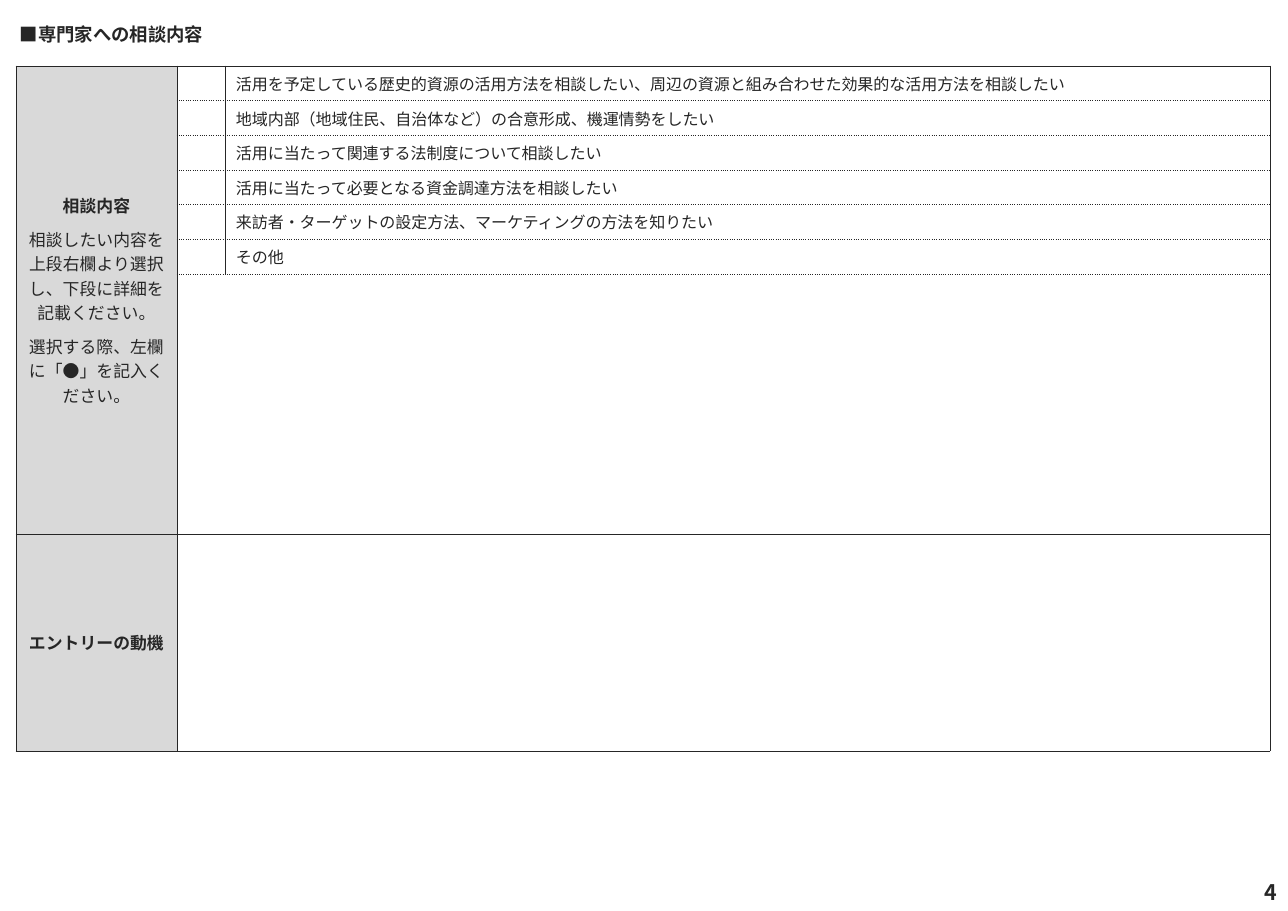
import pptx
import pptx.dml.color
import pptx.enum.text
import pptx.oxml
import pptx.oxml.ns
import pptx.util

PX = 8300
FONT = "Noto Sans CJK JP"
COLORS = {"ink": "262626", "label": "D9D9D9", "paper": "FFFFFF"}
LEFT, CENTER, RIGHT = (pptx.enum.text.PP_ALIGN.LEFT, pptx.enum.text.PP_ALIGN.CENTER,
                       pptx.enum.text.PP_ALIGN.RIGHT)
MIDDLE = pptx.enum.text.MSO_ANCHOR.MIDDLE

OPTIONS = [
    "活用を予定している歴史的資源の活用方法を相談したい、周辺の資源と組み合わせた効果的な活用方法を相談したい",
    "地域内部（地域住民、自治体など）の合意形成、機運情勢をしたい",
    "活用に当たって関連する法制度について相談したい",
    "活用に当たって必要となる資金調達方法を相談したい",
    "来訪者・ターゲットの設定方法、マーケティングの方法を知りたい",
    "その他",
]
CONSULTATION = [
    "相談内容",
    "相談したい内容を上段右欄より選択し、下段に詳細を記載ください。",
    "選択する際、左欄に「●」を記入ください。",
]
DETAIL_ROW = len(OPTIONS)
MOTIVE_ROW = DETAIL_ROW + 1
COLUMN_WIDTHS = [161, 48, 1045]
OPTIONS_HEIGHT, DETAIL_HEIGHT, MOTIVE_HEIGHT = 208, 260, 217


def px(n):
    return pptx.util.Emu(n * PX)


def rgb(name):
    return pptx.dml.color.RGBColor.from_string(COLORS[name])


def write(tf, lines, size, align=LEFT, bold=True):
    """Fill a text frame; only the first line can be bold, later ones are spaced."""
    tf.word_wrap = True
    tf.text = "\n".join(lines)
    for i, p in enumerate(tf.paragraphs):
        p.alignment = align
        if i:
            p.space_before = pptx.util.Pt(6)
        for r in p.runs:
            r.font.size = pptx.util.Pt(size)
            r.font.bold = bold and i == 0
            r.font.name = FONT
            r.font.color.rgb = rgb("ink")
            ea = pptx.oxml.parse_xml(
                f'<a:ea {pptx.oxml.ns.nsdecls("a")} typeface="{FONT}"/>')
            r.font.fill  # keeps the fill ahead of the typefaces
            r._r.get_or_add_rPr().find(pptx.oxml.ns.qn("a:latin")).addnext(ea)


def add_text(slide, box, text, size, align=LEFT, anchor=None):
    sp = slide.shapes.add_textbox(*map(px, box))
    write(sp.text_frame, [text], size, align)
    sp.text_frame.vertical_anchor = anchor


def set_blank_size(cell, size):
    """Keep an empty cell from stretching its row."""
    end = pptx.oxml.parse_xml(
        f'<a:endParaRPr {pptx.oxml.ns.nsdecls("a")} sz="{int(size * 100)}"/>')
    cell.text_frame.paragraphs[0]._p.append(end)


def set_borders(cell, dotted):
    """Draw all four sides, dotted on the sides named in dotted (T, B)."""
    tcPr = cell._tc.get_or_add_tcPr()
    for i, side in enumerate("LRTB"):
        dash = "sysDot" if side in dotted else "solid"
        tcPr.insert(i, pptx.oxml.parse_xml(
            f'<a:ln{side} {pptx.oxml.ns.nsdecls("a")} w="6350"><a:solidFill>'
            f'<a:srgbClr val="{COLORS["ink"]}"/></a:solidFill>'
            f'<a:prstDash val="{dash}"/></a:ln{side}>'))


def dotted_sides(row, col):
    if col == 0:
        return ""
    return ("T" if 0 < row <= DETAIL_ROW else "") + ("B" if row < DETAIL_ROW else "")


def add_form(slide):
    heights = [OPTIONS_HEIGHT / len(OPTIONS)] * len(OPTIONS) + [DETAIL_HEIGHT, MOTIVE_HEIGHT]
    frame = slide.shapes.add_table(len(heights), len(COLUMN_WIDTHS), px(16), px(66),
                                   px(sum(COLUMN_WIDTHS)), px(round(sum(heights))))
    table = frame.table
    table.first_row = table.horz_banding = False
    for column, width in zip(table.columns, COLUMN_WIDTHS):
        column.width = px(width)
    for row, height in zip(table.rows, heights):
        row.height = px(height)

    table.cell(0, 0).merge(table.cell(DETAIL_ROW, 0))
    for row in (DETAIL_ROW, MOTIVE_ROW):
        table.cell(row, 1).merge(table.cell(row, 2))

    write(table.cell(0, 0).text_frame, CONSULTATION, 11, CENTER)
    write(table.cell(MOTIVE_ROW, 0).text_frame, ["エントリーの動機"], 11, CENTER)
    for row, option in enumerate(OPTIONS):
        write(table.cell(row, 2).text_frame, [option], 10.5, bold=False)

    for row in range(len(heights)):
        for col in range(len(COLUMN_WIDTHS)):
            cell = table.cell(row, col)
            cell.vertical_anchor = MIDDLE
            cell.fill.solid()
            cell.fill.fore_color.rgb = rgb("paper" if col else "label")
            if not cell.text:
                set_blank_size(cell, 10.5)
            if not cell.is_spanned:
                set_borders(cell, dotted_sides(row, col))


def main():
    prs = pptx.Presentation()
    prs.slide_width, prs.slide_height = px(1288), px(911)
    slide = prs.slides.add_slide(prs.slide_layouts[6])
    add_form(slide)
    add_text(slide, (9, 18, 620, 33), "■専門家への相談内容", 12)
    add_text(slide, (1252, 872, 36, 40), "4", 14, RIGHT, MIDDLE)
    prs.save("out.pptx")


if __name__ == "__main__":
    main()
